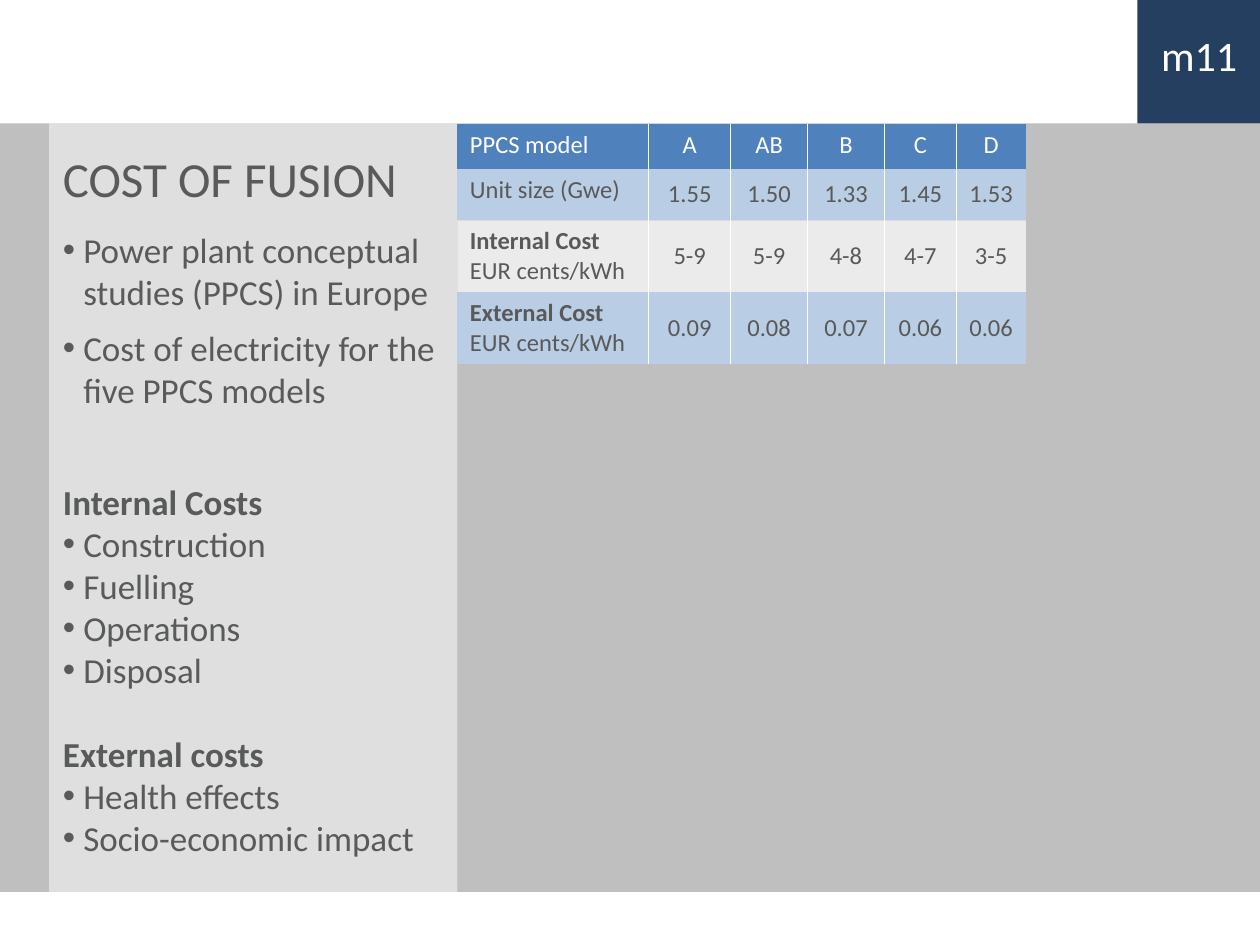
import lxml.etree
import pptx
import pptx.dml.color
import pptx.enum.shapes
import pptx.enum.text
import pptx.oxml.ns
import pptx.util

Cm, Pt = pptx.util.Cm, pptx.util.Pt
ALIGN, ANCHOR = pptx.enum.text.PP_ALIGN, pptx.enum.text.MSO_ANCHOR
qn = pptx.oxml.ns.qn

FONT = "Calibri"
COLORS = {
    "white": "FFFFFF", "grey": "BFBFBF", "navy": "253F61", "text": "595A5A",
    "header": "4F81BD", "band": "B9CDE5", "cell": "595959",
}
BAND_TOP, BAND_HEIGHT = 2.49, 15.49
PANEL_LEFT, PANEL_WIDTH = 0.99, 8.23
BADGE_LEFT, BADGE_SIZE = 22.93, 2.49
BULLET_INDENT = 0.41

COLUMNS = [3.86, 1.65, 1.55, 1.55, 1.45, 1.4]
ROW_HEIGHTS = [0.91, 1.04, 1.45, 1.45]
ROWS = [
    ["PPCS model", "A", "AB", "B", "C", "D"],
    ["Unit size (Gwe)", "1.55", "1.50", "1.33", "1.45", "1.53"],
    ["Internal Cost\nEUR cents/kWh", "5-9", "5-9", "4-8", "4-7", "3-5"],
    ["External Cost\nEUR cents/kWh", "0.09", "0.08", "0.07", "0.06", "0.06"],
]
ROW_FILLS = [("header", 100), ("band", 100), ("white", 70), ("band", 100)]

STUDIES = [
    "Power plant conceptual studies (PPCS) in Europe",
    "Cost of electricity for the five PPCS models",
]
COST_GROUPS = [
    ("Internal Costs", 32, ["Construction", "Fuelling", "Operations", "Disposal"]),
    ("External costs", 24, ["Health effects", "Socio-economic impact"]),
]


def rgb(name):
    return pptx.dml.color.RGBColor.from_string(COLORS[name])


def set_fill(fill, color, opacity=100):
    """Fill with a solid colour; opacity is in percent."""
    fill.solid()
    fill.fore_color.rgb = rgb(color)
    if opacity < 100:
        srgb = fill._xPr.find(qn("a:solidFill")).find(qn("a:srgbClr"))
        lxml.etree.SubElement(srgb, qn("a:alpha"), val=str(opacity * 1000))


def write(tf, text, size=20, color="text", bold=False, align=ALIGN.LEFT,
          before=0, after=0, bullet=False):
    """Write one paragraph, using the empty first one when it is free."""
    p = tf.paragraphs[0] if not tf.paragraphs[0].runs else tf.add_paragraph()
    p.alignment = align
    p.space_before, p.space_after = Pt(before), Pt(after)
    if bullet:
        pPr = p._p.get_or_add_pPr()
        pPr.set("marL", str(Cm(BULLET_INDENT)))
        pPr.set("indent", str(-Cm(BULLET_INDENT)))
        lxml.etree.SubElement(pPr, qn("a:buFont"), typeface="Arial")
        lxml.etree.SubElement(pPr, qn("a:buChar"), char="•")
    r = p.add_run()
    r.text = text
    r.font.name, r.font.size, r.font.bold = FONT, Pt(size), bold
    r.font.color.rgb = rgb(color)


def set_borders(cell, left, right):
    """Draw thin white side borders where asked, and no others."""
    tcPr = cell._tc.get_or_add_tcPr()
    for side, shown in (("L", left), ("R", right), ("T", False), ("B", False)):
        ln = lxml.etree.SubElement(tcPr, qn(f"a:ln{side}"), w=str(Pt(0.5)))
        if shown:
            solid = lxml.etree.SubElement(ln, qn("a:solidFill"))
            lxml.etree.SubElement(solid, qn("a:srgbClr"), val=COLORS["white"])
        else:
            lxml.etree.SubElement(ln, qn("a:noFill"))


class SlideBuilder:
    def __init__(self, slide):
        self.slide = slide

    def rect(self, left, top, width, height, color, opacity=100):
        sp = self.slide.shapes.add_shape(
            pptx.enum.shapes.MSO_SHAPE.RECTANGLE,
            Cm(left), Cm(top), Cm(width), Cm(height))
        sp.shadow.inherit = False
        sp.line.fill.background()
        set_fill(sp.fill, color, opacity)
        return sp

    def text_box(self, left, top, width, height, inset=True):
        sp = self.slide.shapes.add_textbox(Cm(left), Cm(top), Cm(width), Cm(height))
        tf = sp.text_frame
        tf.word_wrap = True
        if not inset:
            tf.margin_left = tf.margin_right = tf.margin_top = tf.margin_bottom = 0
        return tf

    def table(self, left, top):
        table = self.slide.shapes.add_table(
            len(ROWS), len(COLUMNS), Cm(left), Cm(top),
            Cm(sum(COLUMNS)), Cm(sum(ROW_HEIGHTS))).table
        table.first_row = table.horz_banding = False
        for column, width in zip(table.columns, COLUMNS):
            column.width = Cm(width)
        for i, (row, values) in enumerate(zip(table.rows, ROWS)):
            row.height = Cm(ROW_HEIGHTS[i])
            for j, value in enumerate(values):
                cell = table.cell(i, j)
                set_borders(cell, left=j > 0, right=j < len(COLUMNS) - 1)
                set_fill(cell.fill, *ROW_FILLS[i])
                if i and j:
                    cell.vertical_anchor = ANCHOR.MIDDLE
                lines = value.split("\n")
                for k, line in enumerate(lines):
                    write(cell.text_frame, line, size=14,
                          color="cell" if i else "white",
                          bold=len(lines) > 1 and k == 0,
                          align=ALIGN.CENTER if j else ALIGN.LEFT)


def main():
    prs = pptx.Presentation()
    prs.slide_width, prs.slide_height = Cm(25.4), Cm(19.05)
    s = SlideBuilder(prs.slides.add_slide(prs.slide_layouts[6]))

    s.rect(0, BAND_TOP, 25.4, BAND_HEIGHT, "grey")
    s.rect(BADGE_LEFT, 0, BADGE_SIZE, BADGE_SIZE, "navy")
    badge = s.text_box(BADGE_LEFT, 0.48, BADGE_SIZE, 1.27)
    write(badge, "m11", size=24, color="white", align=ALIGN.CENTER)

    s.rect(PANEL_LEFT, BAND_TOP, PANEL_WIDTH, BAND_HEIGHT, "white", opacity=50)
    tf = s.text_box(1.27, 3, 7.65, 16, inset=False)
    write(tf, "COST OF FUSION", size=28, after=12)
    for study in STUDIES:
        write(tf, study, after=8, bullet=True)
    for heading, gap, items in COST_GROUPS:
        write(tf, heading, bold=True, before=gap)
        for item in items:
            write(tf, item, bullet=True)

    s.table(PANEL_LEFT + PANEL_WIDTH, BAND_TOP)
    prs.save("out.pptx")


if __name__ == "__main__":
    main()
